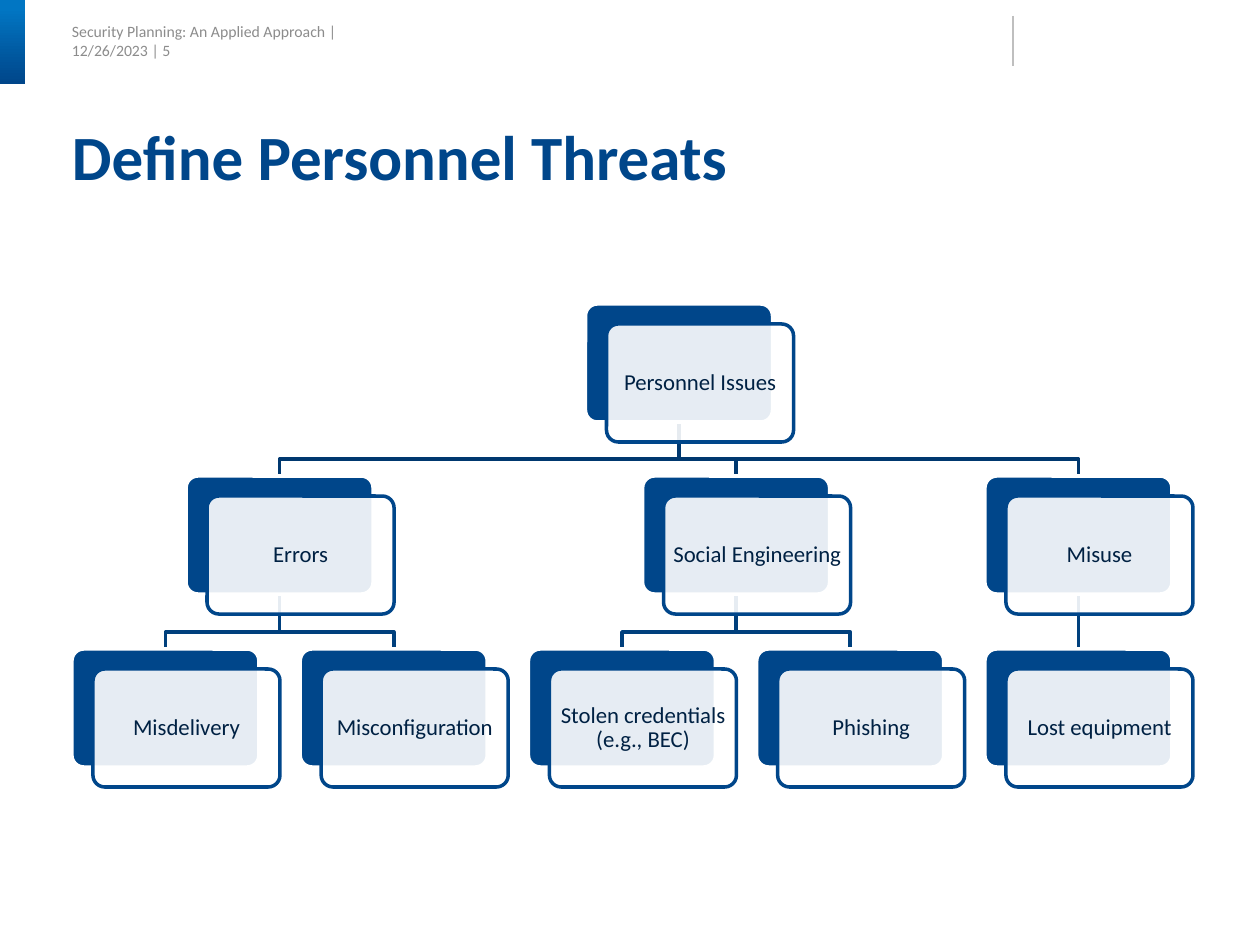
from lxml import etree
from pptx import Presentation
from pptx import util as u
from pptx.dml.color import RGBColor
from pptx.enum import shapes, text
from pptx.oxml.ns import qn

TITLE = "Define Personnel Threats"
HEADER = "Security Planning: An Applied Approach | 12/26/2023 | 5"
THREATS = ("Personnel Issues", [
    ("Errors", [("Misdelivery", []), ("Misconfiguration", [])]),
    ("Social Engineering", [("Stolen credentials (e.g., BEC)", []), ("Phishing", [])]),
    ("Misuse", [("Lost equipment", [])]),
])

FONT = "Calibri"
WHITE = RGBColor(0xFF, 0xFF, 0xFF)
NAVY = RGBColor(0x00, 0x46, 0x8A)
BLUE = RGBColor(0x01, 0x76, 0xC3)
INK = RGBColor(0x00, 0x21, 0x43)
GRAY = RGBColor(0x8C, 0x8C, 0x8C)
RULE = RGBColor(0xBF, 0xBF, 0xBF)
BRANCH_COLORS = (RGBColor(0x00, 0x38, 0x6F), RGBColor(0x00, 0x40, 0x7D))

SLIDE_W, SLIDE_H = 1260, 945
LEFT, COLUMN_STEP = 72, 228.25
LEVEL_TOPS = (304, 476, 649)
BOX_W, BOX_H = 187, 118
FRONT_DX, FRONT_DY = 21, 20
ELBOW_RISE = 17


def px(n):
    return u.Emu(round(n * 914400 / 126))


def place_tree(node, level=0, first_column=0):
    """Return (label, level, column, children), each parent midway over its children."""
    label, children = node
    placed, next_column = [], first_column
    for child in children:
        branch, next_column = place_tree(child, level + 1, next_column)
        placed.append(branch)
    if not placed:
        return (label, level, first_column, []), first_column + 1
    column = (placed[0][2] + placed[-1][2]) / 2
    return (label, level, column, placed), next_column


def walk(node):
    yield node
    for child in node[3]:
        yield from walk(child)


def box_left(column):
    return LEFT + column * COLUMN_STEP


def draw_branch(slide, parent, child):
    _, level, column, _ = parent
    x1, x2 = (box_left(c) + BOX_W / 2 for c in (column, child[2]))
    y1, y2 = LEVEL_TOPS[level] + BOX_H, LEVEL_TOPS[level + 1]
    elbow = y2 - ELBOW_RISE
    bends = [] if x1 == x2 else [(x1, elbow), (x2, elbow)]
    builder = slide.shapes.build_freeform(px(x1), px(y1))
    builder.add_line_segments([(px(x), px(y)) for x, y in bends + [(x2, y2)]], close=False)
    branch = builder.convert_to_shape()
    branch.shadow.inherit = False
    branch.fill.background()
    branch.line.color.rgb = BRANCH_COLORS[level]
    branch.line.width = u.Pt(2)


def add_card(slide, x, y, fill, line):
    card = slide.shapes.add_shape(shapes.MSO_SHAPE.ROUNDED_RECTANGLE,
                                  px(x), px(y), px(BOX_W), px(BOX_H))
    card.adjustments[0] = 0.1
    card.shadow.inherit = False
    card.fill.solid()
    card.fill.fore_color.rgb = fill
    card.line.color.rgb = line
    card.line.width = u.Pt(2)
    return card


def draw_threat(slide, label, level, column):
    x, y = box_left(column), LEVEL_TOPS[level]
    add_card(slide, x, y, NAVY, WHITE)
    front = add_card(slide, x + FRONT_DX, y + FRONT_DY, WHITE, NAVY)
    color = front.fill._xPr.find(qn("a:solidFill"))[0]
    etree.SubElement(color, qn("a:alpha"), val="90000")
    frame = front.text_frame
    frame.word_wrap = True
    frame.vertical_anchor = text.MSO_ANCHOR.MIDDLE
    frame.margin_left = frame.margin_right = px(6)
    frame.margin_top = frame.margin_bottom = px(6)
    write(frame, label, 13, INK, text.PP_ALIGN.CENTER, 0.9)


def write(frame, words, size, color, align=text.PP_ALIGN.LEFT, spacing=1.0, bold=False):
    paragraph = frame.paragraphs[0]
    paragraph.text = words
    paragraph.alignment = align
    paragraph.line_spacing = spacing
    font = paragraph.font
    font.name, font.size, font.bold = FONT, u.Pt(size), bold
    font.color.rgb = color


def draw_header(slide):
    header = slide.shapes.add_textbox(px(72), px(29), px(358), px(29))
    frame = header.text_frame
    frame.word_wrap = False
    frame.vertical_anchor = text.MSO_ANCHOR.MIDDLE
    frame.margin_left = frame.margin_top = 0
    frame.margin_right, frame.margin_bottom = px(25), px(5)
    write(frame, HEADER, 9, GRAY)

    tab = slide.shapes.add_shape(shapes.MSO_SHAPE.RECTANGLE, 0, 0, px(25), px(84))
    tab.shadow.inherit = False
    tab.line.fill.background()
    tab.fill.gradient()
    tab.fill.gradient_angle = 270
    for stop, (position, color) in zip(tab.fill.gradient_stops, ((0.1, BLUE), (1, NAVY))):
        stop.position = position
        stop.color.rgb = color

    rule = slide.shapes.add_connector(shapes.MSO_CONNECTOR.STRAIGHT,
                                      px(1013), px(16), px(1013), px(66))
    rule.line.color.rgb = RULE
    rule.line.width = u.Pt(0.75)
    etree.SubElement(rule._element.spPr, qn("a:effectLst"))


def draw_title(slide):
    title = slide.shapes.title
    title.left, title.top, title.width, title.height = px(72), px(126), px(1124), px(69)
    frame = title.text_frame
    frame.margin_left = frame.margin_right = frame.margin_top = frame.margin_bottom = 0
    frame.vertical_anchor = text.MSO_ANCHOR.TOP
    frame.auto_size = text.MSO_AUTO_SIZE.SHAPE_TO_FIT_TEXT
    write(frame, TITLE, 36, NAVY, spacing=0.9, bold=True)


def main():
    deck = Presentation()
    deck.slide_width, deck.slide_height = px(SLIDE_W), px(SLIDE_H)
    slide = deck.slides.add_slide(deck.slide_layouts.get_by_name("Title Only"))
    draw_header(slide)
    draw_title(slide)
    root, _ = place_tree(THREATS)
    for parent in walk(root):
        for child in parent[3]:
            draw_branch(slide, parent, child)
    for label, level, column, _ in walk(root):
        draw_threat(slide, label, level, column)
    deck.save("out.pptx")


if __name__ == "__main__":
    main()
